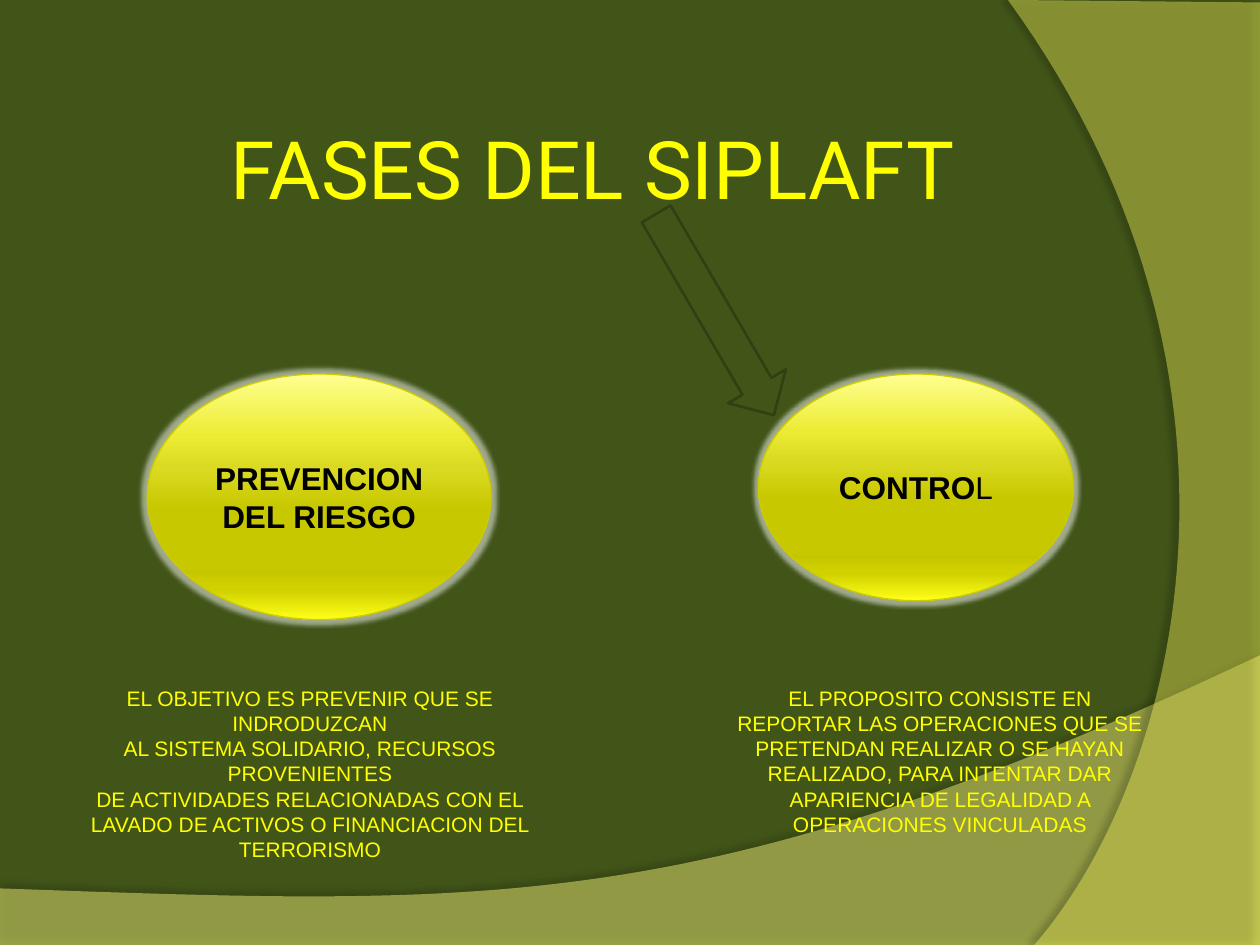
from lxml.etree import SubElement
from pptx import Presentation
from pptx.dml.color import RGBColor
from pptx.enum.shapes import MSO_SHAPE as Shape
from pptx.enum.text import MSO_ANCHOR as Anchor, PP_ALIGN as Align
from pptx.oxml.ns import qn
from pptx.util import Cm, Pt

COLORS = {
    "background": "425519", "arrow_line": "313F12",
    "wave": "FFFF7F", "side": "FFFF5E", "text": "FFFF00",
    "label": "000000", "oval_line": "CCCC00", "glow": "FFFFFF",
    "shadow": "000000",
}
OVAL_STOPS = [(0, "FFFF90"), (25, "ECEC35"), (38, "DADA23"), (55, "C8C800"),
              (80, "C6C600"), (88, "D1D100"), (100, "FFFF18")]


def rgb(name):
    return RGBColor.from_string(COLORS[name])


def add_color(parent, value, alpha=None):
    clr = SubElement(parent, qn("a:srgbClr"), val=value)
    if alpha is not None:
        SubElement(clr, qn("a:alpha"), val=str(alpha * 1000))


def add_effect(s, tag, color, alpha, **attrs):
    s.shadow.inherit = False
    effects = s._element.spPr.find(qn("a:effectLst"))
    effect = SubElement(effects, qn(tag), **{k: str(v) for k, v in attrs.items()})
    add_color(effect, COLORS[color], alpha)


def bezier(p0, p1, p2, p3, steps=60):
    """Points along a cubic curve, without its start."""
    for i in range(1, steps + 1):
        t = i / steps
        u = 1 - t
        yield tuple(u**3 * a + 3 * u * u * t * b + 3 * u * t * t * c + t**3 * d
                    for a, b, c, d in zip(p0, p1, p2, p3))


def add_swoosh(slide, corners, curve, color, alpha, shadow_alpha, distance, angle):
    """Translucent area: straight corners, then one curve from the last corner."""
    points = [(Cm(x), Cm(y)) for x, y in corners + list(bezier(corners[-1], *curve))]
    builder = slide.shapes.build_freeform(*points[0], scale=1.0)
    builder.add_line_segments(points[1:], close=True)
    s = builder.convert_to_shape()
    s.fill.solid()
    s.fill.fore_color.rgb = rgb(color)
    clr = s._element.spPr.find(qn("a:solidFill"))[0]
    SubElement(clr, qn("a:alpha"), val=str(alpha * 1000))
    s.line.fill.background()
    add_effect(s, "a:outerShdw", "shadow", shadow_alpha, blurRad=Pt(4),
               dist=Pt(distance), dir=angle * 60000, rotWithShape=0)


def add_run(p, text, size, color, font="Arial", bold=False):
    r = p.add_run()
    r.text = text
    r.font.size = Pt(size)
    r.font.name = font
    r.font.bold = bold
    r.font.color.rgb = rgb(color)


def add_text(slide, box, paragraphs, size, font="Arial"):
    tf = slide.shapes.add_textbox(*map(Cm, box)).text_frame
    tf.word_wrap = True
    for i, text in enumerate(paragraphs):
        p = tf.paragraphs[0] if i == 0 else tf.add_paragraph()
        p.alignment = Align.CENTER
        add_run(p, text, size, "text", font)
    return tf


def add_oval(slide, box, runs):
    s = slide.shapes.add_shape(Shape.OVAL, *map(Cm, box))
    s.fill.gradient()
    s.fill.gradient_angle = 270
    stops = s._element.spPr.find(qn("a:gradFill")).find(qn("a:gsLst"))
    for stop in list(stops):
        stops.remove(stop)
    for position, value in OVAL_STOPS:
        add_color(SubElement(stops, qn("a:gs"), pos=str(position * 1000)), value)
    s.line.color.rgb = rgb("oval_line")
    s.line.width = Pt(0.75)
    add_effect(s, "a:glow", "glow", 50, rad=Pt(5))
    tf = s.text_frame
    tf.word_wrap = True
    tf.vertical_anchor = Anchor.MIDDLE
    p = tf.paragraphs[0]
    p.alignment = Align.CENTER
    for text, bold in runs:
        add_run(p, text, 18, "label", bold=bold)


def add_arrow(slide, box, rotation):
    s = slide.shapes.add_shape(Shape.DOWN_ARROW, *map(Cm, box))
    s.shadow.inherit = False
    s.rotation = rotation
    s.fill.solid()
    s.fill.fore_color.rgb = rgb("background")
    s.line.color.rgb = rgb("arrow_line")
    s.line.width = Pt(1.5)


def main():
    prs = Presentation()
    prs.slide_width, prs.slide_height = Cm(25.4), Cm(19.05)
    slide = prs.slides.add_slide(prs.slide_layouts[6])
    slide.background.fill.solid()
    slide.background.fill.fore_color.rgb = rgb("background")

    # Background swooshes
    add_swoosh(slide, [(0, 17.91), (0, 19.07), (25.4, 19.07), (25.4, 13.21)],
               [(14.2, 18.52), (9.93, 18.26), (0, 17.91)], "wave", 45, 35, 3.5, 270)
    add_swoosh(slide, [(25.4, 0.05), (25.4, 19.05), (20.85, 19.05)],
               [(23.75, 15.72), (25.86, 7.62), (20.32, 0)], "side", 40, 45, 4, 180)

    # Title
    tf = add_text(slide, (1.57, 1.78, 20.75, 3.18), ["FASES DEL SIPLAFT"], 46, "Roboto")
    tf.vertical_anchor = Anchor.MIDDLE
    tf.margin_left = tf.margin_right = Cm(0.13)

    # Phases and the arrow to the second one
    add_oval(slide, (2.97, 7.54, 6.93, 4.95), [("PREVENCION DEL RIESGO", True)])
    add_oval(slide, (15.29, 7.54, 6.35, 4.57), [("CONTRO", True), ("L", False)])
    add_arrow(slide, (13.74, 3.99, 1.35, 4.7), 329.7)

    # Descriptions
    add_text(slide, (0.99, 13.69, 10.52, 5.38), [
        "EL OBJETIVO ES PREVENIR QUE SE INDRODUZCAN",
        "AL SISTEMA SOLIDARIO, RECURSOS PROVENIENTES",
        "DE ACTIVIDADES RELACIONADAS CON EL LAVADO DE ACTIVOS "
        "O FINANCIACION DEL TERRORISMO",
    ], 12)
    add_text(slide, (14.48, 13.69, 8.94, 3.33), [
        "EL PROPOSITO CONSISTE EN REPORTAR LAS OPERACIONES QUE SE PRETENDAN "
        "REALIZAR O SE HAYAN REALIZADO, PARA INTENTAR DAR APARIENCIA DE "
        "LEGALIDAD A OPERACIONES VINCULADAS",
    ], 12)

    prs.save("out.pptx")


if __name__ == "__main__":
    main()
